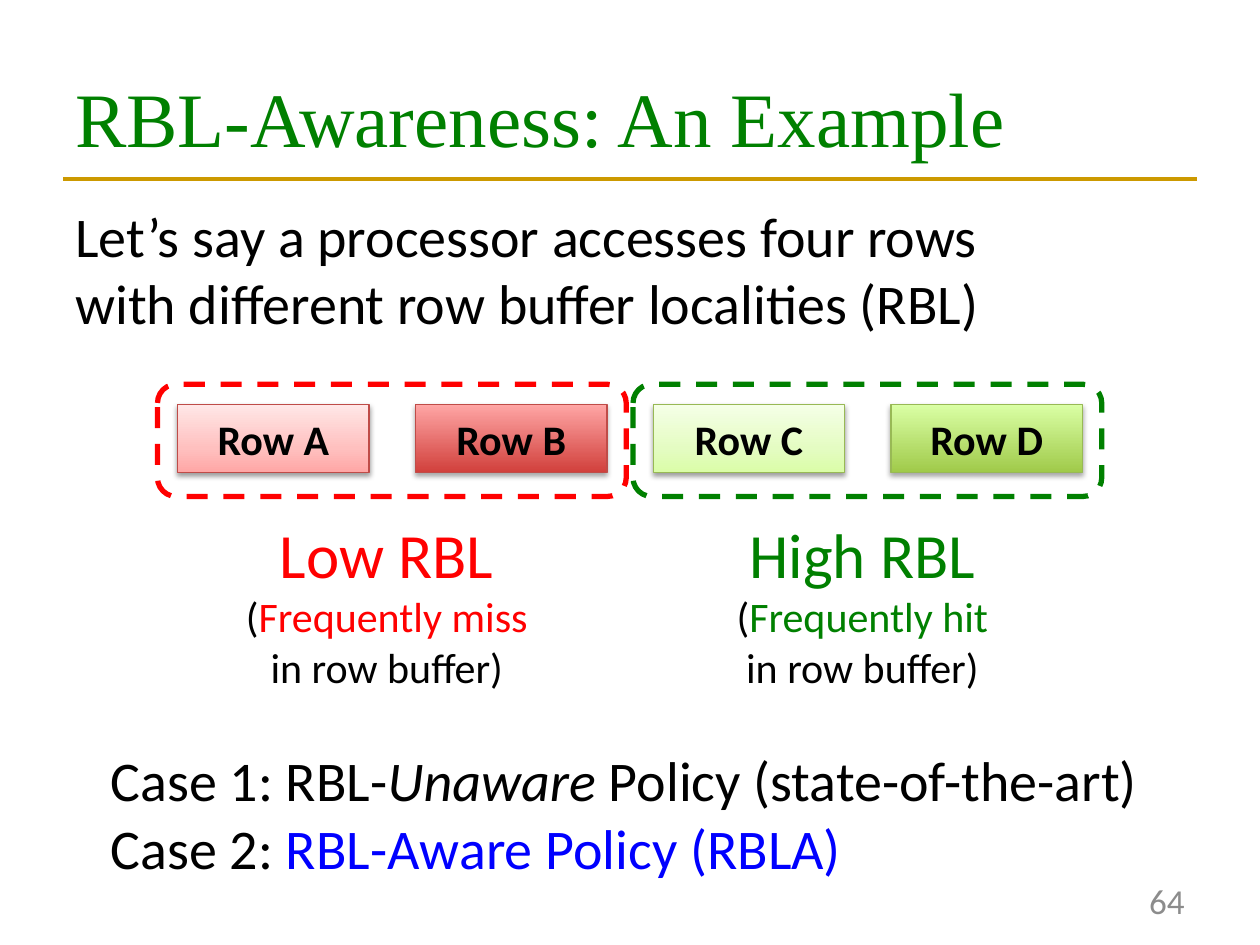
import copy
import pptx
import pptx.util
import pptx.dml.color
import pptx.enum.dml
import pptx.enum.shapes
import pptx.enum.text
import pptx.oxml
import pptx.oxml.ns

W, H = 10, 7.5
BLACK, RED, GREEN, BLUE, GOLD, GREY = "000000", "FF0000", "008000", "0000FF", "CC9900", "8C8C8C"
SANS, SERIF = "Calibri", "Times New Roman"

TITLE = "RBL-Awareness: An Example"
INTRO = [(32, [("Let’s say a processor accesses four rows", BLACK), ("\n", BLACK),
               ("with different row buffer localities (RBL)", BLACK)])]
ROWS = [
    ("Row A", "BF4C48", [(0, "FFA6A5"), (0.35, "FFC0BF"), (1, "FFE7E7")], 38, 1.6),
    ("Row B", "BF4C48", [(0, "D1403C"), (1, "FFA6A5")], 35, 1.8),
    ("Row C", "98B955", [(0, "DAFDA7"), (0.35, "E4FCC2"), (1, "F5FFE7")], 38, 1.6),
    ("Row D", "98B955", [(0, "A0CA4A"), (1, "DAFFA5")], 35, 1.8),
]
GROUPS = [("Low RBL", "Frequently miss", RED, 2.46), ("High RBL", "Frequently hit", GREEN, 2.22)]
CASES = [
    (32, [("Case 1: RBL-", BLACK), ("Unaware", BLACK, True), (" Policy (state-of-the-art)", BLACK)]),
    (32, [("Case 2: ", BLACK), ("RBL-Aware Policy (RBLA)", BLUE)]),
]

MARGIN = 0.05 * W
ROW_LEFT, ROW_TOP, ROW_W, ROW_H = 1.41, 3.21, 1.52, 0.54
ROW_PITCH = 1.887
GROUP_LEFT, GROUP_TOP, GROUP_W, GROUP_H = 1.25, 3.05, 3.72, 0.89
GROUP_PITCH = 2 * ROW_PITCH

ALIGN = pptx.enum.text.PP_ALIGN
MIDDLE = pptx.enum.text.MSO_ANCHOR.MIDDLE
SHAPE = pptx.enum.shapes.MSO_SHAPE


def rgb(value):
    return pptx.dml.color.RGBColor.from_string(value)


def box(*lengths):
    return [pptx.util.Inches(v) for v in lengths]


def fill_text(tf, paragraphs, align=ALIGN.LEFT, font=SANS, bold=False):
    for i, (size, runs) in enumerate(paragraphs):
        p = tf.paragraphs[0] if i == 0 else tf.add_paragraph()
        p.alignment = align
        p.font.name, p.font.size, p.font.bold = font, pptx.util.Pt(size), bold
        for text, color, *italic in runs:
            if text == "\n":
                p.add_line_break()
                continue
            r = p.add_run()
            r.text = text
            r.font.color.rgb = rgb(color)
            if italic:
                r.font.italic = True


def add_text(slide, at, paragraphs, wrap=True, anchor=None, **style):
    tf = slide.shapes.add_textbox(*box(*at)).text_frame
    tf.word_wrap = wrap
    if anchor is not None:
        tf.vertical_anchor = anchor
    fill_text(tf, paragraphs, **style)


def set_gradient(sp, stops):
    sp.fill.gradient()
    sp.fill.gradient_angle = 90
    gs_list = sp._element.spPr.find(".//" + pptx.oxml.ns.qn("a:gsLst"))
    while len(gs_list) < len(stops):
        gs_list.append(copy.deepcopy(gs_list[-1]))
    for stop, (position, color) in zip(sp.fill.gradient_stops, stops):
        stop.position = position
        stop.color.rgb = rgb(color)


def set_shadow(sp, alpha, distance):
    sp.shadow.inherit = False
    effects = sp._element.spPr.find(pptx.oxml.ns.qn("a:effectLst"))
    effects.append(pptx.oxml.parse_xml(
        f'<a:outerShdw {pptx.oxml.ns.nsdecls("a")} blurRad="{pptx.util.Pt(3.1)}" '
        f'dist="{pptx.util.Pt(distance)}" dir="5400000" rotWithShape="0">'
        f'<a:srgbClr val="{BLACK}"><a:alpha val="{alpha * 1000}"/></a:srgbClr></a:outerShdw>'))


def add_rule(slide, y):
    line = slide.shapes.add_connector(pptx.enum.shapes.MSO_CONNECTOR.STRAIGHT,
                                      *box(MARGIN, y, W - MARGIN, y))
    line.line.color.rgb = rgb(GOLD)
    line.line.width = pptx.util.Pt(2.25)
    line._element.spPr.append(pptx.oxml.parse_xml(f'<a:effectLst {pptx.oxml.ns.nsdecls("a")}/>'))


def add_row(slide, i, name, edge, stops, alpha, distance):
    sp = slide.shapes.add_shape(SHAPE.RECTANGLE,
                                *box(ROW_LEFT + i * ROW_PITCH, ROW_TOP, ROW_W, ROW_H))
    set_gradient(sp, stops)
    sp.line.color.rgb = rgb(edge)
    sp.line.width = pptx.util.Pt(0.75)
    set_shadow(sp, alpha, distance)
    sp.text_frame.vertical_anchor = MIDDLE
    fill_text(sp.text_frame, [(24, [(name, BLACK)])], ALIGN.CENTER, bold=True)


def add_group(slide, i, name, note, color, width):
    left = GROUP_LEFT + i * GROUP_PITCH
    sp = slide.shapes.add_shape(SHAPE.ROUNDED_RECTANGLE, *box(left, GROUP_TOP, GROUP_W, GROUP_H))
    sp.fill.background()
    sp.line.color.rgb = rgb(color)
    sp.line.width = pptx.util.Pt(3)
    sp.line.dash_style = pptx.enum.dml.MSO_LINE.DASH
    sp.shadow.inherit = False
    label = [(36, [(name, color)]),
             (24, [("(", BLACK), (note, color)]),
             (24, [("in row buffer)", BLACK)])]
    text_left = left + (GROUP_W - width) / 2 - 0.04
    add_text(slide, (text_left, 4.04, width, 1.51), label, wrap=False, align=ALIGN.CENTER)


def main():
    prs = pptx.Presentation()
    prs.slide_width, prs.slide_height = box(W, H)
    slide = prs.slides.add_slide(prs.slide_layouts[6])
    add_rule(slide, 1.42)
    add_text(slide, (MARGIN, 0.3, W - 2 * MARGIN, 1.25), [(44, [(TITLE, GREEN)])],
             anchor=MIDDLE, font=SERIF)
    add_text(slide, (7.17, 6.95, 2.33, 0.4), [(20, [("64", GREY)])],
             anchor=MIDDLE, align=ALIGN.RIGHT)
    add_text(slide, (MARGIN, 1.55, 7.46, 1.18), INTRO, wrap=False)
    for i, row in enumerate(ROWS):
        add_row(slide, i, *row)
    for i, group in enumerate(GROUPS):
        add_group(slide, i, *group)
    add_text(slide, (0.78, 5.87, 8.4, 1.18), CASES)
    prs.save("out.pptx")


if __name__ == "__main__":
    main()
